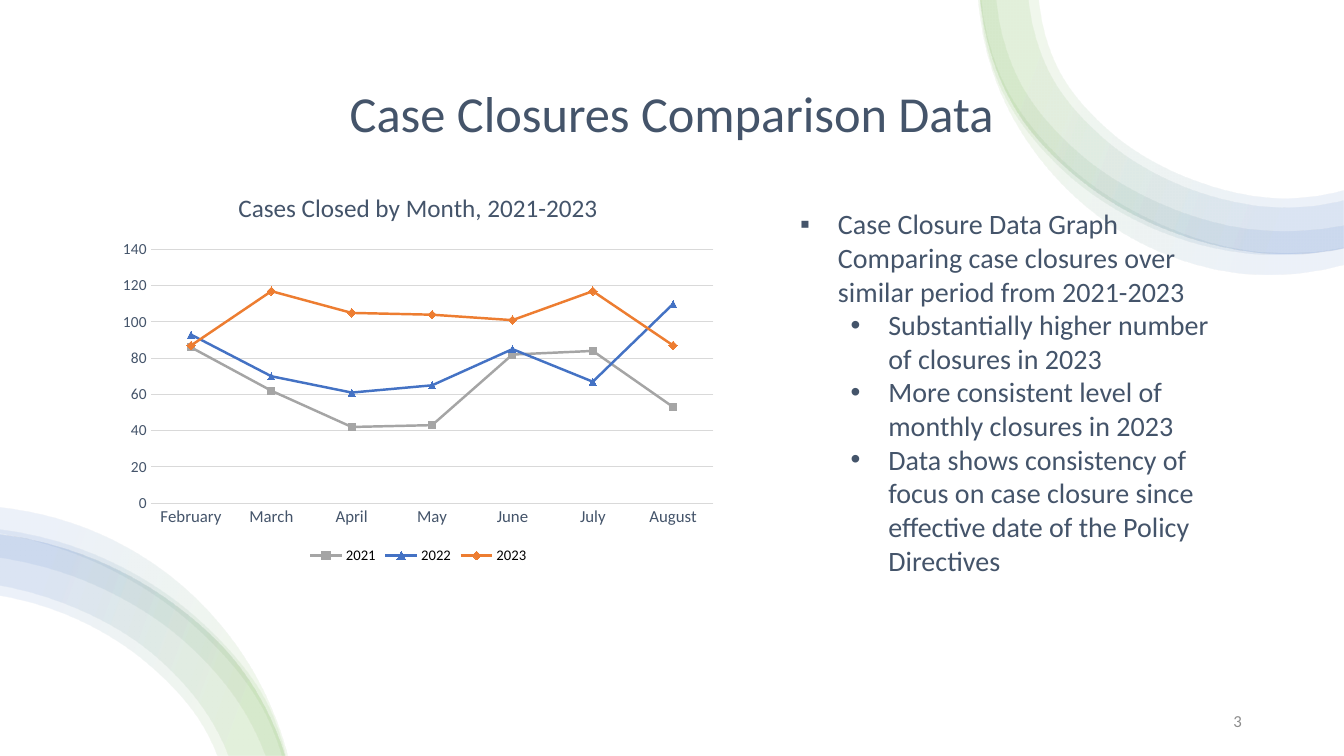
from dataclasses import dataclass

from lxml.etree import SubElement
from pptx import Presentation
from pptx.chart.data import CategoryChartData
from pptx.dml.color import RGBColor
from pptx.enum.chart import XL_CHART_TYPE as ChartType
from pptx.enum.chart import XL_LEGEND_POSITION as LegendPosition
from pptx.enum.chart import XL_MARKER_STYLE as Marker
from pptx.enum.chart import XL_TICK_MARK as TickMark
from pptx.enum.shapes import MSO_SHAPE as Shape
from pptx.enum.text import MSO_ANCHOR as Anchor
from pptx.enum.text import PP_ALIGN as Align
from pptx.oxml.ns import qn
from pptx.util import Pt

FONT = "Calibri"
COLORS = {"text": "44546A", "number": "8C8C8C", "grid": "D9D9D9", "black": "000000",
          "white": "FFFFFF", "green": "70AD47", "blue": "4472C4", "gray": "A5A5A5",
          "orange": "ED7D31"}
BAND_STOPS = ((16, "green"), (85, "blue"))
BAND_OPACITY = 10
MONTHS = ("February", "March", "April", "May", "June", "July", "August")
Points = tuple[tuple[int, int], ...]


@dataclass(frozen=True)
class Band:
    """One translucent arc; edge points are in hundredths of an inch."""
    outer: Points
    inner: Points
    angle: int


@dataclass(frozen=True)
class Year:
    name: str
    closures: tuple[int, ...]
    color: str
    marker: Marker
    marker_size: int


@dataclass(frozen=True)
class Bullet:
    text: str
    symbol: str = "•"
    level: int = 1
    indent: int = 63


TOP, BOTTOM = 340, 160
TOP_EDGE = ((973, 0), (1009, 110), (1080, 184), (1174, 233), (1279, 251), (1333, 245))
BOTTOM_EDGE = ((282, 750), (235, 659), (173, 600), (96, 556), (0, 530))
BANDS = (
    Band(TOP_EDGE, ((1333, 188), (1279, 196), (1187, 179), (1106, 134), (1050, 68), (1031, 0)),
         TOP),
    Band(TOP_EDGE, ((1333, 198), (1279, 205), (1184, 188), (1100, 141), (1042, 73), (1021, 0)),
         TOP),
    Band(((973, 0), (994, 89), (1054, 168), (1139, 224), (1239, 251), (1333, 246)),
         ((1333, 223), (1242, 227), (1150, 201), (1071, 152), (1012, 81), (989, 0)), TOP),
    Band(((971, 0), (991, 87), (1046, 174), (1131, 240), (1236, 271), (1333, 262)),
         ((1333, 245), (1239, 248), (1143, 218), (1059, 163), (997, 84), (974, 0)), TOP),
    Band(((285, 750), (245, 657), (166, 570), (115, 538), (0, 504)),
         ((0, 530), (102, 562), (195, 624), (264, 711), (279, 750)), BOTTOM),
    Band(BOTTOM_EDGE, ((0, 591), (53, 605), (143, 656), (205, 728), (215, 750)), BOTTOM),
    Band(((283, 750), (268, 705), (200, 618), (106, 556), (0, 526)),
         ((0, 554), (94, 581), (182, 636), (247, 715), (263, 750)), BOTTOM),
    Band(BOTTOM_EDGE, ((0, 581), (56, 596), (150, 648), (214, 724), (226, 750)), BOTTOM),
)
YEARS = (
    Year("2021", (86, 62, 42, 43, 82, 84, 53), "gray", Marker.SQUARE, 5),
    Year("2022", (93, 70, 61, 65, 85, 67, 110), "blue", Marker.TRIANGLE, 5),
    Year("2023", (87, 117, 105, 104, 101, 117, 87), "orange", Marker.DIAMOND, 6),
)
BULLETS = (
    Bullet("Case Closure Data Graph Comparing case closures over similar period from 2021-2023",
           "▪", 0, 27),
    Bullet("Substantially higher number of closures in 2023"),
    Bullet("More consistent level of monthly closures in 2023"),
    Bullet("Data shows consistency of focus on case closure since effective date of the "
           "Policy Directives"),
)


def rgb(name: str) -> RGBColor:
    return RGBColor.from_string(COLORS[name])


def set_font(font, size: float, color: str) -> None:
    font.name, font.size, font.bold = FONT, Pt(size), False
    font.color.rgb = rgb(color)


def bezier_handles(edge: list[complex]) -> list[tuple[complex, complex]]:
    """Give two control points for each stretch of a smooth curve through the edge."""
    steps = [b - a for a, b in zip(edge, edge[1:])]
    slopes = [step / abs(step) for step in steps]
    inner = [(s * abs(b) + t * abs(a)) / (abs(a) + abs(b))
             for a, b, s, t in zip(steps, steps[1:], slopes, slopes[1:])]
    tangents = [2 * slopes[0] - inner[0], *inner, 2 * slopes[-1] - inner[-1]]
    return [(a + s * abs(step) / 3, b - t * abs(step) / 3)
            for a, b, step, s, t in zip(edge, edge[1:], steps, tangents, tangents[1:])]


def add_band(slide, band: Band) -> None:
    outer, inner = ([complex(Pt(x * 0.72), Pt(y * 0.72)) for x, y in edge]
                    for edge in (band.outer, band.inner))
    builder = slide.shapes.build_freeform(int(outer[0].real), int(outer[0].imag))
    builder.add_line_segments([(p.real, p.imag) for p in outer[1:] + inner], close=True)
    arc = builder.convert_to_shape()
    handles = [*bezier_handles(outer), None, *bezier_handles(inner)]
    for segment, pair in zip(list(arc._element.iter(qn("a:lnTo"))), handles):
        if pair:
            segment.tag = qn("a:cubicBezTo")
            for i, point in enumerate(pair):
                handle = SubElement(segment, qn("a:pt"), x=str(round(point.real - arc.left)),
                                    y=str(round(point.imag - arc.top)))
                segment.insert(i, handle)
    arc.shadow.inherit = False
    arc.line.fill.background()
    arc.fill.gradient()
    arc.fill.gradient_angle = band.angle
    stops = arc._element.spPr.find(qn("a:gradFill")).find(qn("a:gsLst"))
    for stop in list(stops):
        stops.remove(stop)
    for position, color in BAND_STOPS:
        stop = SubElement(stops, qn("a:gs"), pos=str(position * 1000))
        tint = SubElement(stop, qn("a:srgbClr"), val=COLORS[color])
        SubElement(tint, qn("a:alpha"), val=str(BAND_OPACITY * 1000))


def set_layout(part, index: int, **fractions: float) -> None:
    """Place a chart part by fractions of the chart's size."""
    for old in part.findall(qn("c:layout")):
        part.remove(old)
    layout = SubElement(part, qn("c:layout"))
    part.insert(index, layout)
    manual = SubElement(layout, qn("c:manualLayout"))
    if "w" in fractions:
        SubElement(manual, qn("c:layoutTarget"), val="inner")
    for axis in ("x", "y"):
        SubElement(manual, qn(f"c:{axis}Mode"), val="edge")
    for key, value in fractions.items():
        SubElement(manual, qn(f"c:{key}"), val=str(value))


def add_closures_chart(slide) -> None:
    data = CategoryChartData()
    data.categories = MONTHS
    for year in YEARS:
        data.add_series(year.name, year.closures)
    chart = slide.shapes.add_chart(ChartType.LINE_MARKERS, Pt(79.2), Pt(123.1),
                                   Pt(439.2), Pt(283), data).chart
    set_font(chart.font, 10, "black")
    heading = chart.chart_title.text_frame.paragraphs[0]
    heading.text = "Cases Closed by Month, 2021-2023"
    set_font(heading.font, 18, "text")
    set_layout(chart.chart_title._element, 1, x=0.2, y=0.035)
    set_layout(chart.plots[0]._element.getparent(), 0, x=0.065, y=0.195, w=0.915, h=0.64)
    chart.has_legend = True
    chart.legend.position = LegendPosition.BOTTOM
    chart.legend.include_in_layout = False
    set_font(chart.legend.font, 10.5, "black")

    months, counts = chart.category_axis, chart.value_axis
    for axis, size in ((months, 12), (counts, 11)):
        axis.major_tick_mark = axis.minor_tick_mark = TickMark.NONE
        set_font(axis.tick_labels.font, size, "text")
    counts.minimum_scale, counts.maximum_scale, counts.major_unit = 0, 140, 20
    counts.format.line.fill.background()
    for line in (months.format.line, counts.major_gridlines.format.line):
        line.color.rgb, line.width = rgb("grid"), Pt(0.75)

    chart.plots[0].vary_by_categories = False
    for year, series in zip(YEARS, chart.plots[0].series):
        series.smooth = False
        series.format.line.color.rgb, series.format.line.width = rgb(year.color), Pt(1.75)
        series.marker.style, series.marker.size = year.marker, year.marker_size
        series.marker.format.fill.solid()
        series.marker.format.fill.fore_color.rgb = rgb(year.color)
        series.marker.format.line.color.rgb = rgb(year.color)


def add_findings(slide) -> None:
    frame = slide.shapes.add_textbox(Pt(564.5), Pt(28.8), Pt(326.2), Pt(506.2)).text_frame
    frame.word_wrap, frame.margin_top = True, Pt(119)
    for i, bullet in enumerate(BULLETS):
        paragraph = frame.add_paragraph() if i else frame.paragraphs[0]
        paragraph.text, paragraph.level = bullet.text, bullet.level
        set_font(paragraph.font, 20, "text")
        properties = paragraph._p.get_or_add_pPr()
        properties.set("marL", str(Pt(bullet.indent)))
        properties.set("indent", str(-Pt(27)))
        properties.insert(0, SubElement(properties, qn("a:buFont"), typeface="Arial"))
        properties.insert(1, SubElement(properties, qn("a:buChar"), char=bullet.symbol))


def main() -> None:
    deck = Presentation()
    deck.slide_width, deck.slide_height = Pt(960), Pt(540)
    slide = deck.slides.add_slide(deck.slide_layouts[5])
    title = slide.shapes.title
    backdrop = slide.shapes.add_shape(Shape.RECTANGLE, 0, 0, Pt(960), Pt(540))
    backdrop.shadow.inherit = False
    backdrop.fill.solid()
    backdrop.fill.fore_color.rgb = rgb("white")
    backdrop.line.fill.background()
    title._element.addprevious(backdrop._element)

    title.left, title.top, title.width, title.height = Pt(63.4), Pt(36), Pt(833), Pt(93.6)
    title.text_frame.vertical_anchor = Anchor.MIDDLE
    heading = title.text_frame.paragraphs[0]
    heading.text, heading.alignment = "Case Closures Comparison Data", Align.CENTER
    heading.line_spacing = 0.9
    set_font(heading.font, 36, "text")

    for band in BANDS:
        add_band(slide, band)
    add_closures_chart(slide)
    add_findings(slide)
    page = slide.shapes.add_textbox(Pt(678.2), Pt(500.4), Pt(216), Pt(28.8)).text_frame
    page.word_wrap, page.vertical_anchor = True, Anchor.MIDDLE
    page.paragraphs[0].text, page.paragraphs[0].alignment = "3", Align.RIGHT
    set_font(page.paragraphs[0].font, 12, "number")
    deck.save("out.pptx")


if __name__ == "__main__":
    main()
